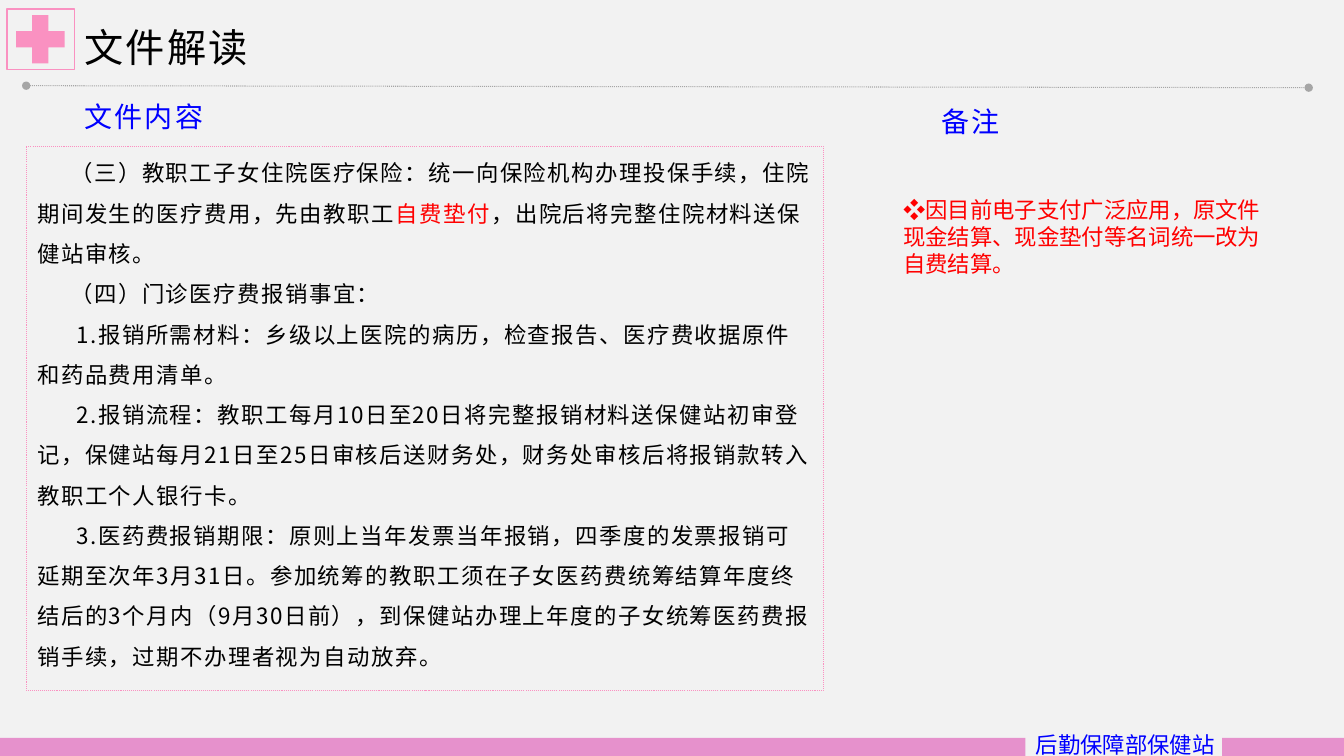
from dataclasses import dataclass

from lxml import etree
from pptx import Presentation
from pptx.dml.color import RGBColor
from pptx.enum import dml, shapes, text
from pptx.oxml import ns
from pptx.util import Inches, Pt


@dataclass(frozen=True)
class Theme:
    paper: str = "F2F2F2"
    pink: str = "FA91C1"
    footer: str = "E691CC"
    rule: str = "A6A6A6"
    ink: str = "000000"
    blue: str = "0000FF"
    red: str = "FF0000"
    heading_font: str = "Noto Sans CJK SC"
    plain_font: str = "Arial"
    title_size: int = 28
    heading_size: int = 20
    text_size: int = 16


THEME = Theme()

CLAUSES = [
    (0.33, [("（三）教职工子女住院医疗保险：统一向保险机构办理投保手续，住院期间发生的医疗费用，先由教职工", THEME.ink),
            ("自费垫付", THEME.red),
            ("，出院后将完整住院材料送保健站审核。", THEME.ink)]),
    (0.33, [("（四）门诊医疗费报销事宜：", THEME.ink)]),
    (0.39, [("1.报销所需材料：乡级以上医院的病历，检查报告、医疗费收据原件和药品费用清单。", THEME.ink)]),
    (0.39, [("2.报销流程：教职工每月10日至20日将完整报销材料送保健站初审登记，"
             "保健站每月21日至25日审核后送财务处，财务处审核后将报销款转入教职工个人银行卡。", THEME.ink)]),
    (0.39, [("3.医药费报销期限：原则上当年发票当年报销，四季度的发票报销可延期至次年3月31日。"
             "参加统筹的教职工须在子女医药费统筹结算年度终结后的3个月内（9月30日前），"
             "到保健站办理上年度的子女统筹医药费报销手续，过期不办理者视为自动放弃。", THEME.ink)]),
]


def colour(value):
    return RGBColor.from_string(value)


def style_span(span, size, value, font=THEME.heading_font, spacing=0):
    span.font.size = Pt(size)
    span.font.name = font
    span.font.color.rgb = colour(value)
    properties = span.font._element
    if font == THEME.heading_font:
        east_asian = etree.SubElement(properties, ns.qn("a:ea"))
        east_asian.set("typeface", font)
    if spacing:
        properties.set("spc", str(round(spacing * 100)))


def set_frame(frame, insets, anchor=text.MSO_ANCHOR.TOP):
    frame.word_wrap = True
    frame.vertical_anchor = anchor
    left, top, right, bottom = map(Inches, insets)
    frame.margin_left, frame.margin_top = left, top
    frame.margin_right, frame.margin_bottom = right, bottom


def add_block(page, kind, box, fill=None, line=None, width=1):
    block = page.shapes.add_shape(kind, *map(Inches, box))
    block.shadow.inherit = False
    if fill:
        block.fill.solid()
        block.fill.fore_color.rgb = colour(fill)
    else:
        block.fill.background()
    if line:
        block.line.color.rgb = colour(line)
        block.line.width = Pt(width)
    else:
        block.line.fill.background()
    return block


def add_label(page, box, words, size, value, font=THEME.heading_font, spacing=0,
              insets=(0.11, 0.04, 0.08, 0.04), anchor=text.MSO_ANCHOR.TOP, align=text.PP_ALIGN.LEFT):
    label = page.shapes.add_textbox(*map(Inches, box))
    set_frame(label.text_frame, insets, anchor)
    para = label.text_frame.paragraphs[0]
    para.text = words
    para.alignment = align
    style_span(para.runs[0], size, value, font, spacing)


def add_header(page, left, top, width):
    add_block(page, shapes.MSO_SHAPE.RECTANGLE, (left, top, 0.67, 0.6), line=THEME.pink)
    cross = add_block(page, shapes.MSO_SHAPE.CROSS, (left + 0.09, top + 0.06, 0.48, 0.48), fill=THEME.pink)
    cross.adjustments[0] = 0.331
    add_label(page, (left + 0.66, top + 0.1, width - 0.66, 0.48), "文件解读",
              THEME.title_size, THEME.ink, spacing=1.5)


def add_divider(page, left, top, right, bottom):
    divider = page.shapes.add_connector(
        shapes.MSO_CONNECTOR.STRAIGHT, *map(Inches, (left, top, right, bottom)))
    divider.line.color.rgb = colour(THEME.rule)
    divider.line.width = Pt(0.75)
    divider.line.dash_style = dml.MSO_LINE.ROUND_DOT
    outline = divider.line._get_or_add_ln()
    for end in ("a:headEnd", "a:tailEnd"):
        etree.SubElement(outline, ns.qn(end)).set("type", "oval")
    etree.SubElement(divider._element.spPr, ns.qn("a:effectLst"))


def add_clauses(page, left, top, width, height):
    add_label(page, (left + 0.47, top - 0.5, 5.78, 0.42), "文件内容",
              THEME.heading_size, THEME.blue, spacing=1.5)
    panel = add_block(page, shapes.MSO_SHAPE.RECTANGLE, (left, top, width, height),
                      line=THEME.pink, width=0.75)
    panel.line.dash_style = dml.MSO_LINE.ROUND_DOT
    frame = panel.text_frame
    set_frame(frame, (0.11, 0, 0.09, 0))
    for index, (indent, pieces) in enumerate(CLAUSES):
        para = frame.add_paragraph() if index else frame.paragraphs[0]
        para.alignment = text.PP_ALIGN.LEFT
        para.line_spacing = 1.5
        para._p.get_or_add_pPr().set("indent", str(Inches(indent)))
        for words, value in pieces:
            span = para.add_run()
            span.text = words
            style_span(span, THEME.text_size, value, spacing=1.1)


def add_remarks(page, left, top, width):
    add_label(page, (left + 0.37, top, 4.1 - 0.37, 0.42), "备注",
              THEME.heading_size, THEME.blue, spacing=1.5)
    add_label(page, (left, top + 0.9, width, 0.91),
              "❖因目前电子支付广泛应用，原文件现金结算、现金垫付等名词统一改为自费结算。",
              THEME.text_size, THEME.red, THEME.plain_font, insets=(0.1, 0.05, 0.1, 0.05))


def add_footer(page, top, width, height):
    for left, right in ((0, 10.17), (12.12, width)):
        add_block(page, shapes.MSO_SHAPE.RECTANGLE, (left, top, right - left, height), fill=THEME.footer)
    add_label(page, (9.23, top + 0.02, 3.86, height), "后勤保障部保健站",
              THEME.text_size, THEME.blue, THEME.plain_font, insets=(0.1, 0.05, 0.1, 0),
              anchor=text.MSO_ANCHOR.BOTTOM, align=text.PP_ALIGN.CENTER)


def main():
    deck = Presentation()
    deck.slide_width, deck.slide_height = Inches(13.33), Inches(7.5)
    page = deck.slides.add_slide(deck.slide_layouts[6])
    page.background.fill.solid()
    page.background.fill.fore_color.rgb = colour(THEME.paper)
    add_header(page, 0.07, 0.09, 12.53)
    add_divider(page, 0.26, 0.85, 12.98, 0.87)
    add_clauses(page, 0.26, 1.45, 7.91, 5.4)
    add_remarks(page, 8.86, 1, 3.86)
    add_footer(page, 7.32, 13.33, 0.18)
    deck.save("out.pptx")


if __name__ == "__main__":
    main()
